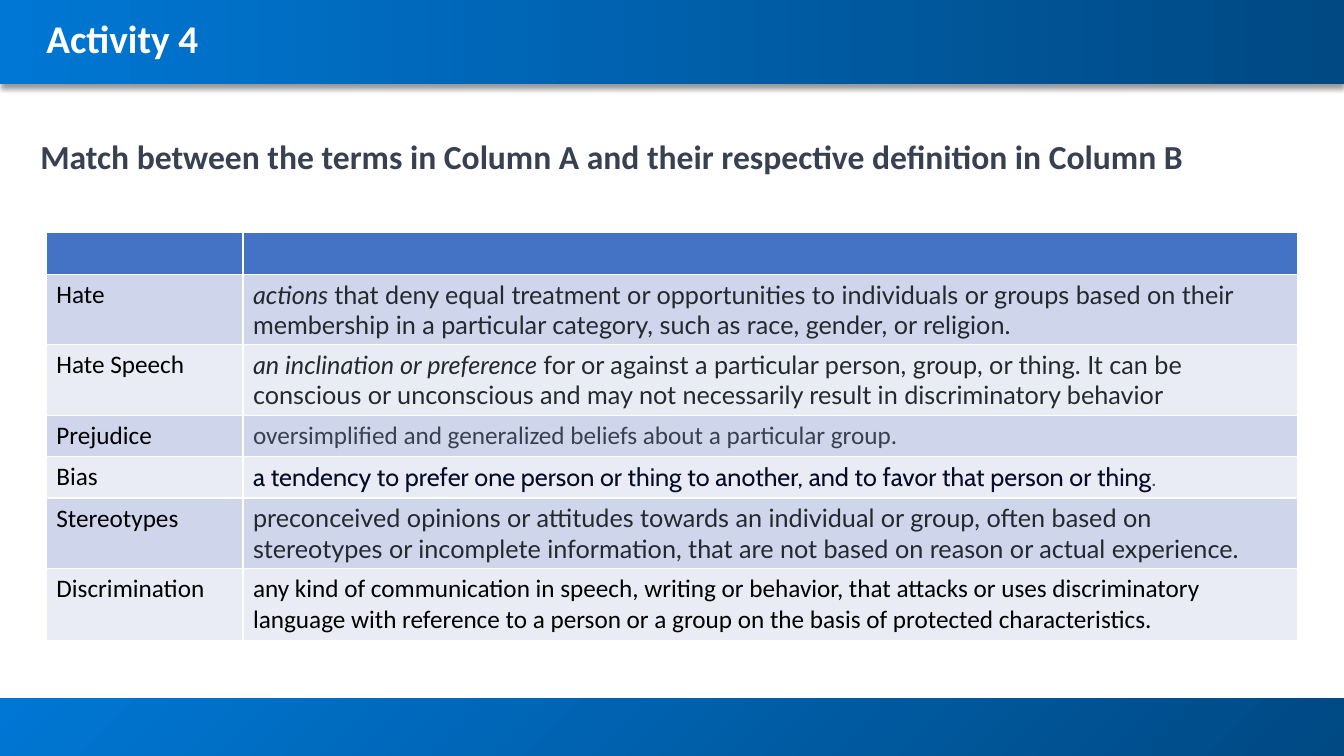
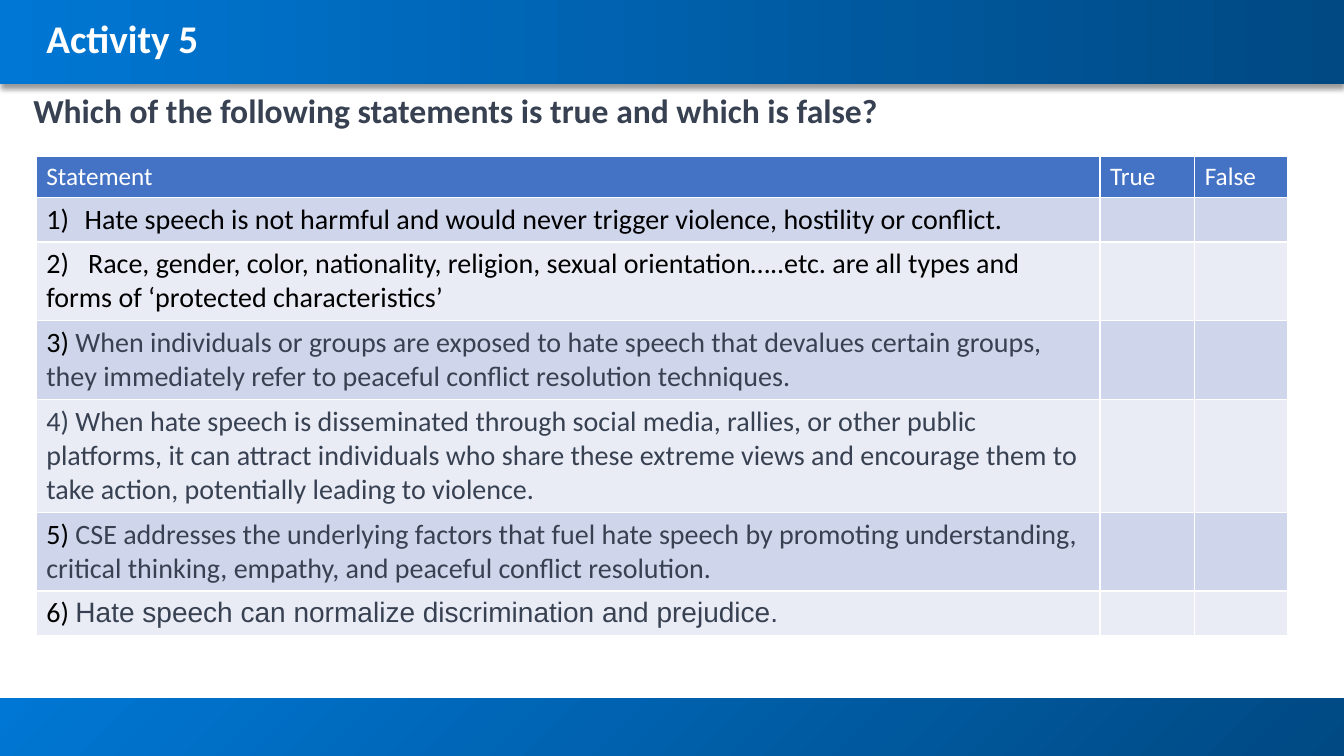
from lxml.etree import SubElement
from pptx import Presentation
from pptx.dml.color import RGBColor
from pptx.enum.shapes import MSO_SHAPE
from pptx.enum.text import MSO_ANCHOR, MSO_AUTO_SIZE, PP_ALIGN
from pptx.oxml.ns import qn
from pptx.util import Inches, Pt

COLORS = {
    "white": "FFFFFF", "black": "000000", "slate": "374151", "ink": "24292F",
    "navy": "040C28", "grey": "4D5156", "band light": "0077D4",
    "band dark": "004983", "header": "4472C4", "odd row": "CFD5EA",
    "even row": "E9EBF5",
}
WIDTH, HEIGHT = 13.33, 7.5
CONTENT_WIDTH = 12.41
ROW_HEIGHT = 0.41


def color(name):
    return RGBColor.from_string(COLORS[name])


def add_span(para, text, size=18, font="Calibri", ink="black", bold=False, italic=False):
    span = para.add_run()
    span.text = text
    span.font.size = Pt(size)
    span.font.name = font
    span.font.color.rgb = color(ink)
    span.font.bold = bold
    span.font.italic = italic


def set_bullet(para, tag, indent=0, **attributes):
    properties = para._p.get_or_add_pPr()
    properties.set("marL", str(Inches(indent)))
    properties.set("indent", str(-Inches(indent)))
    SubElement(properties, qn(tag), attributes)


class ActivityDeck:
    """Holds the shared style and the slide being built."""

    def __init__(self):
        self.deck = Presentation()
        self.deck.slide_width = Inches(WIDTH)
        self.deck.slide_height = Inches(HEIGHT)
        self.page = None

    def add_page(self, title):
        self.page = self.deck.slides.add_slide(self.deck.slide_layouts[1])
        self.add_band(6.93, 0.57, "band dark", "band light", angle=135)
        header = self.add_band(0, 0.83, "band light", "band dark", angle=0)
        self.add_shadow(header)
        self.add_title(title)

    def add_band(self, top, height, start, end, angle):
        band = self.page.shapes.add_shape(
            MSO_SHAPE.RECTANGLE, 0, Inches(top), Inches(WIDTH), Inches(height))
        band.shadow.inherit = False
        band.line.fill.background()
        band.fill.gradient()
        band.fill.gradient_angle = angle
        for stop, name in zip(band.fill.gradient_stops, (start, end)):
            stop.color.rgb = color(name)
        # Bands lie behind the placeholders
        self.page.shapes.title.element.addprevious(band.element)
        return band

    def add_shadow(self, shape):
        effects = shape.element.spPr.find(qn("a:effectLst"))
        shadow = SubElement(effects, qn("a:outerShdw"), {
            "blurRad": str(Pt(4)), "dist": str(Pt(3)), "dir": "5400000",
            "algn": "t", "rotWithShape": "0"})
        tint = SubElement(shadow, qn("a:srgbClr"), val=COLORS["black"])
        SubElement(tint, qn("a:alpha"), val="40000")

    def place(self, box, left, top, height):
        box.left, box.top = Inches(left), Inches(top)
        box.width, box.height = Inches(CONTENT_WIDTH), Inches(height)
        frame = box.text_frame
        frame.word_wrap = True
        frame.auto_size = MSO_AUTO_SIZE.NONE
        para = frame.paragraphs[0]
        para.alignment = PP_ALIGN.LEFT
        para.space_before = Pt(0)
        return frame, para

    def add_title(self, text):
        frame, para = self.place(self.page.shapes.title, 0.46, 0.17, 0.5)
        frame.margin_left = frame.margin_right = 0
        frame.margin_top = frame.margin_bottom = 0
        frame.vertical_anchor = MSO_ANCHOR.MIDDLE
        para.line_spacing = Pt(27.8)
        add_span(para, text, size=28, ink="white", bold=True)

    def add_question(self, text, left, top):
        frame, para = self.place(self.page.placeholders[1], left, top, 5.32)
        frame.vertical_anchor = MSO_ANCHOR.TOP
        para.line_spacing = 0.9
        set_bullet(para, "a:buNone")
        add_span(para, text, size=24, ink="slate", bold=True)

    def add_table(self, rows, left, top, widths):
        """Each cell is a list of (text, format) spans."""
        table = self.page.shapes.add_table(
            len(rows), len(widths), Inches(left), Inches(top),
            Inches(sum(widths)), Inches(ROW_HEIGHT * len(rows))).table
        for column, width in zip(table.columns, widths):
            column.width = Inches(width)
        for index, cells in enumerate(rows):
            table.rows[index].height = Inches(ROW_HEIGHT)
            fill = "header" if index == 0 else "odd row" if index % 2 else "even row"
            for position, spans in enumerate(cells):
                cell = table.cell(index, position)
                cell.fill.solid()
                cell.fill.fore_color.rgb = color(fill)
                for text, style in spans:
                    add_span(cell.text_frame.paragraphs[0], text, **style)
        return table


# Text formats used in the tables
PLAIN = {}
SLATE = {"ink": "slate"}
LATO = {"font": "Lato", "ink": "ink"}
LATO_ITALIC = {**LATO, "italic": True}
CABIN = {"font": "Cabin", "ink": "navy"}
HEADING = {"ink": "white"}
ITEM = {"size": 20}
ITEM_SLATE = {"size": 20, "ink": "slate"}
ITEM_ARIAL = {**ITEM_SLATE, "font": "Arial"}

DEFINITIONS = [
    ("Hate", [
        ("actions ", LATO_ITALIC),
        ("that deny equal treatment or opportunities to individuals or groups based on "
         "their membership in a particular category, such as race, gender, or religion.", LATO)]),
    ("Hate Speech", [
        ("an inclination or preference ", LATO_ITALIC),
        ("for or against a particular person, group, or thing. It can be conscious or "
         "unconscious and may not necessarily result in discriminatory behavior", LATO)]),
    ("Prejudice", [
        ("oversimplified and generalized beliefs about a particular group.", SLATE)]),
    ("Bias", [
        ("a tendency to prefer one person or thing to another, and to favor that person "
         "or thing", CABIN),
        (".", {"font": "Cabin", "ink": "grey"})]),
    ("Stereotypes", [
        ("preconceived opinions or attitudes towards an individual or group, often based on "
         "stereotypes or incomplete information, that are not based on reason or actual "
         "experience.", LATO)]),
    ("Discrimination", [
        ("any kind of communication in speech, writing or behavior, that attacks or uses "
         "discriminatory language with reference to a person or a group on the basis of "
         "protected characteristics.", PLAIN)]),
]

STATEMENTS = [
    [("Hate speech is not harmful and would never trigger violence, hostility or conflict.",
      ITEM)],
    [("2)   Race, gender, color, nationality, religion, sexual orientation…..etc. are all "
      "types and forms of ‘protected characteristics’", ITEM)],
    [("3) ", ITEM),
     ("When individuals or groups are exposed to hate speech that devalues certain groups, "
      "they immediately refer to peaceful conflict resolution techniques.", ITEM_SLATE)],
    [("4) When hate speech is disseminated through social media, rallies, or other public "
      "platforms, it can attract individuals who share these extreme views and encourage "
      "them to take action, potentially leading to violence.", ITEM_SLATE)],
    [("5) ", ITEM),
     ("CSE addresses the underlying factors that fuel hate speech by promoting "
      "understanding, critical thinking, empathy, and peaceful conflict resolution.",
      ITEM_SLATE)],
    [("6) ", ITEM),
     ("Hate speech can normalize discrimination and prejudice.", ITEM_ARIAL)],
]


def main():
    activities = ActivityDeck()

    # Activity 4: terms and definitions
    activities.add_page("Activity 4")
    activities.add_question(
        "Match between the terms in Column A and their respective definition in Column B",
        0.3, 1.34)
    rows = [[[], []]] + [[[(term, PLAIN)], spans] for term, spans in DEFINITIONS]
    activities.add_table(rows, 0.46, 2.31, [1.95, 10.46])

    # Activity 5: true or false
    activities.add_page("Activity 5")
    activities.add_question(
        "Which of the following statements is true and which is false?", 0.23, 0.89)
    headings = [[(text, HEADING)] for text in ("Statement", "True", "False")]
    rows = [headings] + [[spans, [], []] for spans in STATEMENTS]
    table = activities.add_table(rows, 0.36, 1.55, [10.55, 0.94, 0.92])
    set_bullet(table.cell(1, 0).text_frame.paragraphs[0], "a:buAutoNum",
               indent=0.38, type="arabicParenR")

    activities.deck.save("out.pptx")


if __name__ == "__main__":
    main()
